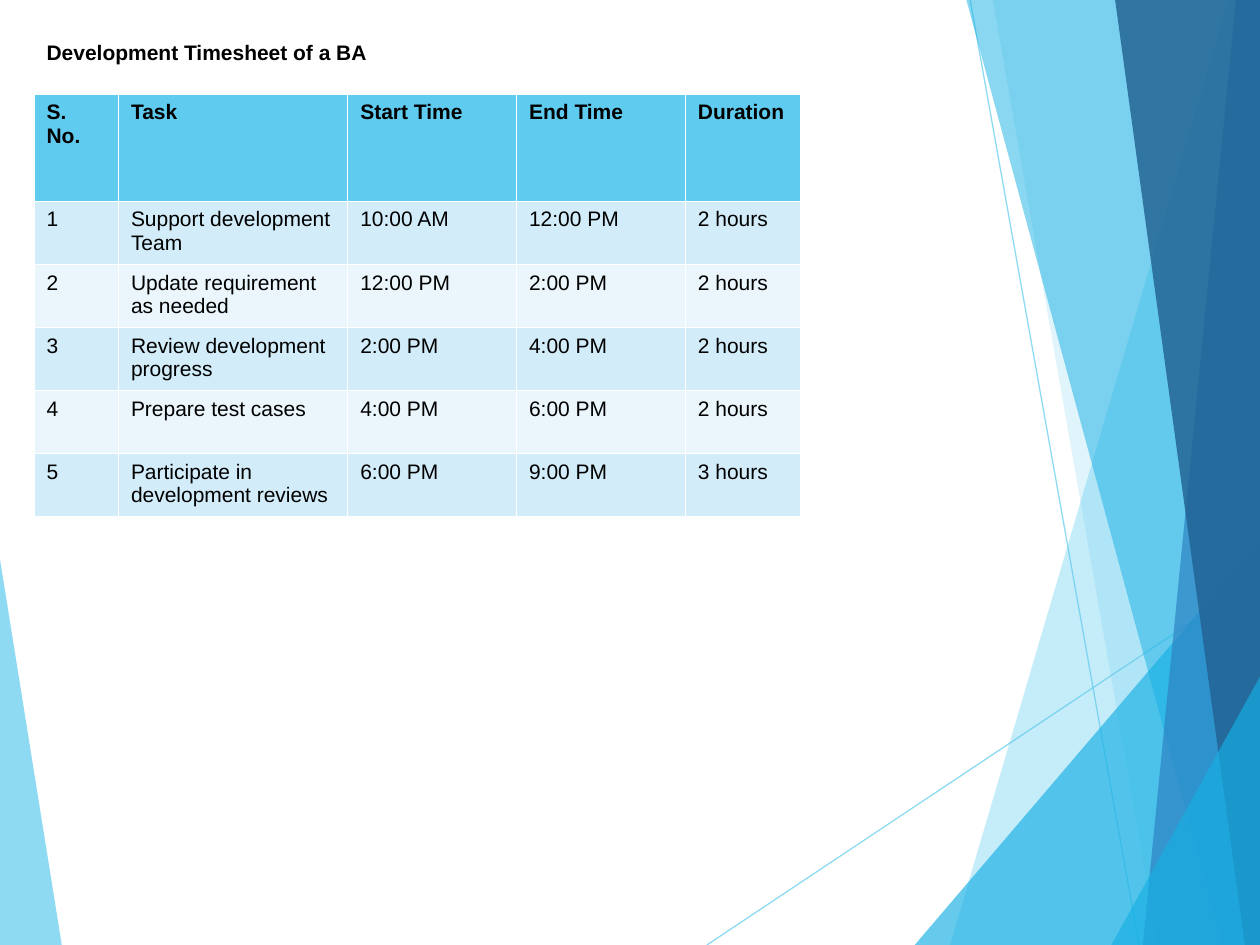
from typing import NamedTuple

from lxml.etree import SubElement as Sub
from pptx import Presentation
from pptx.dml.color import RGBColor
from pptx.enum.shapes import MSO_CONNECTOR as Conn
from pptx.enum.text import MSO_ANCHOR as Anchor, MSO_AUTO_SIZE as Fit, PP_ALIGN as Align
from pptx.oxml.ns import qn
from pptx.util import Inches, Pt

WIDE, HIGH = Inches(10), Inches(7.5)
SKY, AZURE, BLUE, NAVY = "5FCBEF", "17B0E4", "2E83C3", "226292"
BANDS = "D2ECF9", "EAF6FC"
BLACK = "000000"


class Facet(NamedTuple):
    """Corners are percentages of the slide's width and height."""
    color: str
    alpha: int
    spots: list[tuple[float, float]]


class Ray(NamedTuple):
    start: tuple[float, float]
    end: tuple[float, float]


WEDGE = Facet(SKY, 70, [(0, 59.2), (4.9, 100), (0, 100)])
RAYS = [Ray((56.1, 100), (100, 61)), Ray((77, 0), (90.4, 100))]
FACETS = [
    Facet(SKY, 36, [(97.5, 0), (75.4, 100), (100, 100), (100, 0)]),
    Facet(SKY, 20, [(78.8, 0), (91.9, 100), (100, 100), (100, 0)]),
    Facet(AZURE, 66, [(72.6, 100), (100, 57.2), (100, 100)]),
    Facet(AZURE, 50, [(76.7, 0), (97, 100), (100, 100), (100, 0)]),
    Facet(BLUE, 70, [(98.1, 0), (90.7, 100), (100, 100), (100, 0)]),
    Facet(NAVY, 82, [(88.5, 0), (98.8, 100), (100, 100), (100, 0)]),
    Facet(AZURE, 66, [(88.2, 100), (100, 71.6), (100, 100)]),
]

COLS = [0.67, 1.82, 1.34, 1.34, 0.92]
ROWS = [0.85] + [0.5] * 5
HEAD = ["S. No.", "Task", "Start Time", "End Time", "Duration"]
TASKS = [
    ("Support development Team", "10:00 AM", "12:00 PM", "2 hours"),
    ("Update requirement as needed", "12:00 PM", "2:00 PM", "2 hours"),
    ("Review development progress", "2:00 PM", "4:00 PM", "2 hours"),
    ("Prepare test cases", "4:00 PM", "6:00 PM", "2 hours"),
    ("Participate in development reviews", "6:00 PM", "9:00 PM", "3 hours"),
]


def rgb(color: str) -> RGBColor:
    return RGBColor.from_string(color)


def place(spot: tuple[float, float]) -> tuple[int, int]:
    """Turn percentages of the slide into lengths."""
    return round(spot[0] / 100 * WIDE), round(spot[1] / 100 * HIGH)


def paint(fill, color: str, alpha: int = 100) -> None:
    fill.solid()
    fill.fore_color.rgb = rgb(color)
    if alpha < 100:
        tint = fill._xPr.find(qn("a:solidFill"))[0]
        Sub(tint, qn("a:alpha")).set("val", str(alpha * 1000))


def style(para, bold: bool) -> None:
    font = para.font
    font.name, font.size, font.bold = "Arial", Pt(12), bold
    font.color.rgb = rgb(BLACK)


def add_facet(shapes, facet: Facet) -> None:
    first, *rest = map(place, facet.spots)
    pen = shapes.build_freeform(*first)
    pen.add_line_segments(rest, close=True)
    shape = pen.convert_to_shape()
    shape.shadow.inherit = False
    shape.line.fill.background()
    paint(shape.fill, facet.color, facet.alpha)


def add_ray(shapes, ray: Ray) -> None:
    line = shapes.add_connector(Conn.STRAIGHT, *place(ray.start), *place(ray.end))
    line.line.width = Pt(0.75)
    paint(line.line.fill, SKY, 70)
    Sub(line._element.spPr, qn("a:effectLst"))


def set_title(title, text: str) -> None:
    title.left, title.top = Inches(0.27), Inches(0.26)
    title.width, title.height = Inches(7.47), Inches(0.3)
    frame = title.text_frame
    frame.text = text
    frame.word_wrap = True
    frame.auto_size = Fit.SHAPE_TO_FIT_TEXT
    frame.vertical_anchor = Anchor.TOP
    para = frame.paragraphs[0]
    para.alignment = Align.LEFT
    style(para, True)


def add_sheet(shapes) -> None:
    grid = shapes.add_table(len(ROWS), len(COLS), Inches(0.27), Inches(0.75),
                            Inches(sum(COLS)), Inches(sum(ROWS))).table
    for col, width in zip(grid.columns, COLS):
        col.width = Inches(width)
    for row, height in zip(grid.rows, ROWS):
        row.height = Inches(height)
    lines = [HEAD] + [(str(n), *task) for n, task in enumerate(TASKS, 1)]
    for r, line in enumerate(lines):
        for c, text in enumerate(line):
            cell = grid.cell(r, c)
            cell.text = text
            paint(cell.fill, BANDS[(r - 1) % 2] if r else SKY)
            style(cell.text_frame.paragraphs[0], r == 0)


def main() -> None:
    deck = Presentation()
    deck.slide_width, deck.slide_height = WIDE, HIGH
    slide = deck.slides.add_slide(deck.slide_layouts[5])
    shapes = slide.shapes
    add_facet(shapes, WEDGE)
    for ray in RAYS:
        add_ray(shapes, ray)
    for facet in FACETS:
        add_facet(shapes, facet)
    set_title(shapes.title, "Development Timesheet of a BA")
    add_sheet(shapes)
    deck.save("out.pptx")


if __name__ == "__main__":
    main()
